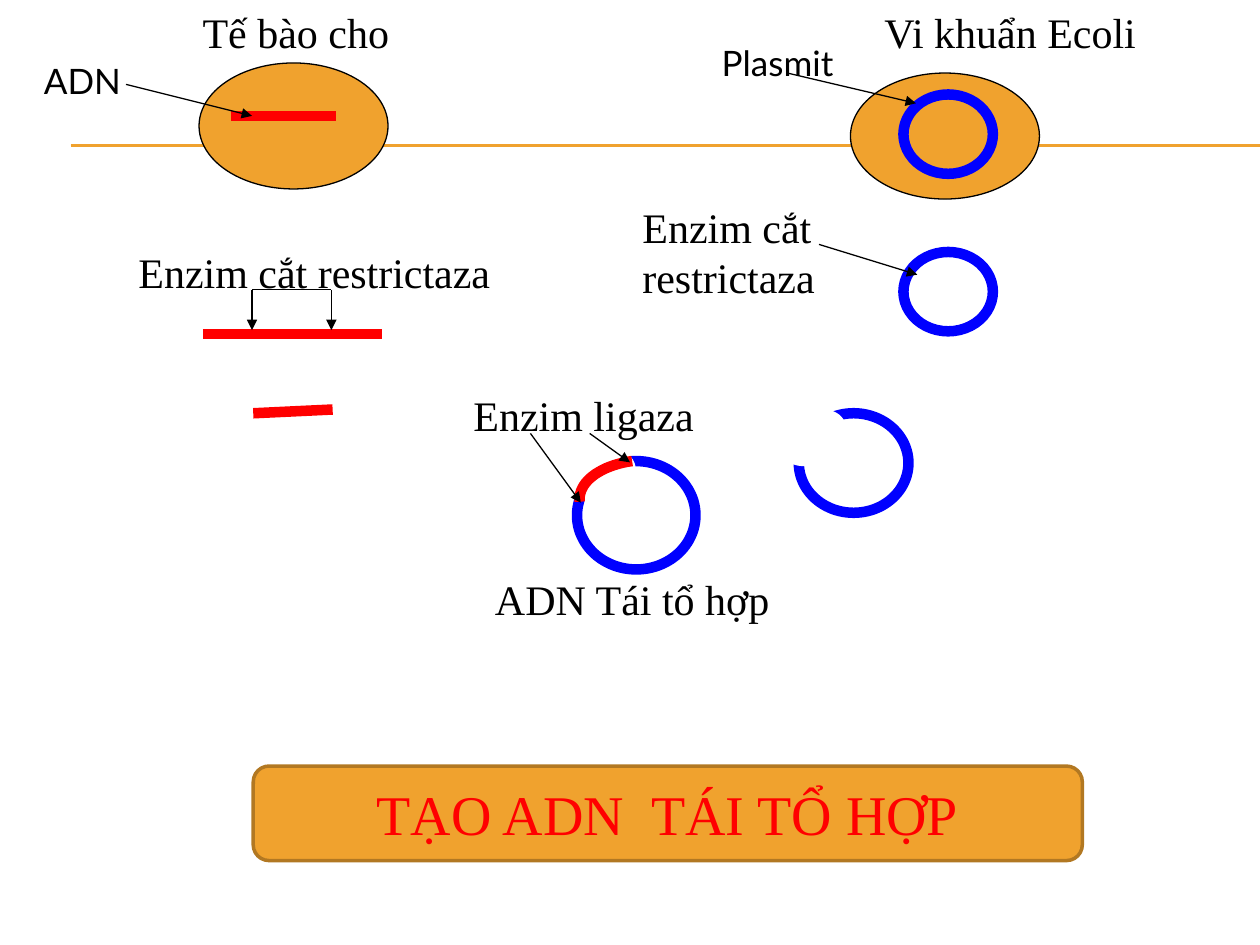
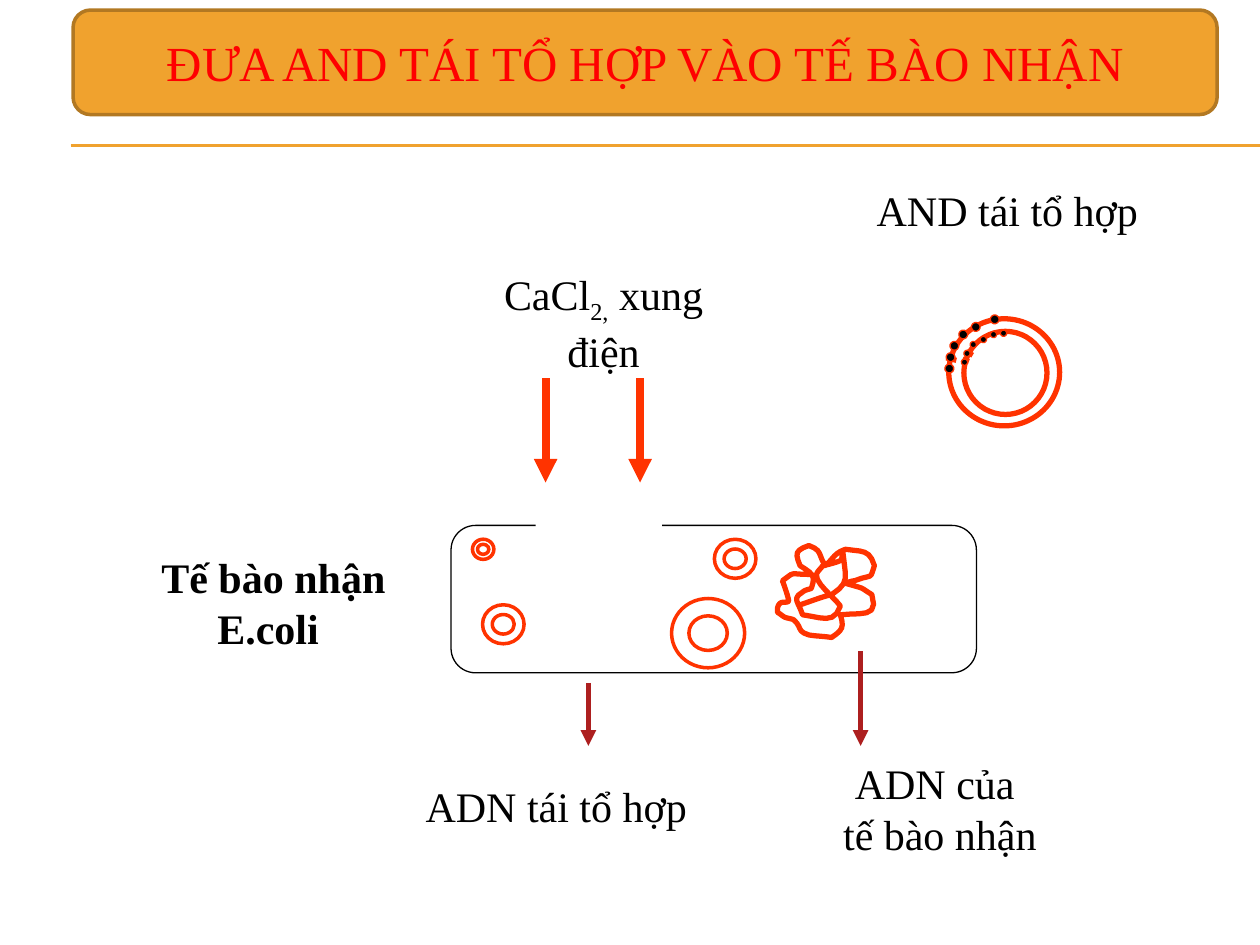
from dataclasses import dataclass
from itertools import pairwise
from math import cos, radians, sin

from lxml.etree import SubElement
from pptx import Presentation
from pptx.dml.color import RGBColor
from pptx.enum.shapes import MSO_CONNECTOR, MSO_SHAPE
from pptx.enum.text import MSO_ANCHOR, MSO_AUTO_SIZE, PP_ALIGN
from pptx.oxml.ns import qn
from pptx.util import Inches, Pt

AMBER, BROWN = "F0A22E", "B27822"
BLACK, WHITE = "000000", "FFFFFF"
RED, BLUE, ORANGE, CRIMSON = "FF0000", "0000FF", "FF3300", "AD1F1F"
SERIF, SANS = "Times New Roman", "Lato"
OVAL, RECT, ROUND, DONUT = (MSO_SHAPE.OVAL, MSO_SHAPE.RECTANGLE,
                            MSO_SHAPE.ROUNDED_RECTANGLE, MSO_SHAPE.DONUT)
Point = tuple[float, float]
Box = tuple[float, float, float, float]


@dataclass
class Line:
    start: Point
    end: Point
    color: str = BLACK
    width: float = 0.75
    arrow: bool = False


@dataclass
class Figure:
    kind: int
    box: Box
    fill: str | None = None
    line: str | None = None
    width: float = 0.75
    rotation: float = 0


@dataclass
class Label:
    box: Box
    text: str
    size: int = 24
    font: str = SERIF
    bold: bool = False
    centered: bool = False


def rgb(color: str) -> RGBColor:
    return RGBColor.from_string(color)


def paint(sp, fill: str | None, line: str | None, width: float) -> None:
    sp.shadow.inherit = False
    if fill:
        sp.fill.solid()
        sp.fill.fore_color.rgb = rgb(fill)
    else:
        sp.fill.background()
    if line:
        sp.line.color.rgb = rgb(line)
        sp.line.width = Pt(width)
    else:
        sp.line.fill.background()


def style_run(r, size: int, font: str, color: str = BLACK, bold: bool = False) -> None:
    r.font.size, r.font.name, r.font.bold = Pt(size), font, bold
    r.font.color.rgb = rgb(color)


def style_text(tf, size: int, font: str = SERIF, color: str = BLACK,
               bold: bool = False, centered: bool = True) -> None:
    for p in tf.paragraphs:
        p.alignment = PP_ALIGN.CENTER if centered else PP_ALIGN.LEFT
        for r in p.runs:
            style_run(r, size, font, color, bold)


def draw_line(s, item: Line) -> None:
    ends = [Inches(v) for v in (*item.start, *item.end)]
    cx = s.shapes.add_connector(MSO_CONNECTOR.STRAIGHT, *ends)
    cx.line.color.rgb = rgb(item.color)
    cx.line.width = Pt(item.width)
    if item.arrow:
        SubElement(cx.line._get_or_add_ln(), qn("a:tailEnd"), type="triangle")
    SubElement(cx.element.spPr, qn("a:effectLst"))


def draw_figure(s, item: Figure):
    sp = s.shapes.add_shape(item.kind, *map(Inches, item.box))
    paint(sp, item.fill, item.line, item.width)
    sp.rotation = item.rotation
    return sp


def draw_label(s, item: Label):
    tf = s.shapes.add_textbox(*map(Inches, item.box)).text_frame
    tf.word_wrap = True
    tf.text = item.text
    style_text(tf, item.size, item.font, bold=item.bold, centered=item.centered)
    return tf


def draw_plate(s, box: Box, text: str) -> None:
    tf = draw_figure(s, Figure(RECT, box, WHITE)).text_frame
    tf.text = text
    tf.word_wrap = False
    tf.vertical_anchor = MSO_ANCHOR.MIDDLE
    style_text(tf, 24)


def draw_curve(s, points: list[Point], color: str, width: float) -> None:
    emu = [(Inches(x), Inches(y)) for x, y in points]
    builder = s.shapes.build_freeform(*emu[0])
    builder.add_line_segments(emu[1:], close=False)
    paint(builder.convert_to_shape(), None, color, width)


def arc_points(center: Point, rx: float, ry: float, first: int, last: int) -> list[Point]:
    return [(center[0] + rx * cos(radians(a)), center[1] - ry * sin(radians(a)))
            for a in range(first, last + 1, 4)]


def bezier_points(knots: list[Point], steps: int = 6) -> list[Point]:
    points = [knots[0]]
    for i in range(0, len(knots) - 1, 3):
        for n in range(1, steps + 1):
            t = n / steps
            weights = ((1 - t) ** 3, 3 * t * (1 - t) ** 2, 3 * t * t * (1 - t), t ** 3)
            points.append(tuple(sum(w * k[axis] for w, k in zip(weights, knots[i:i + 4]))
                                for axis in (0, 1)))
    return points


def draw_banner(s, box: Box, text: str, size: int) -> None:
    banner = draw_figure(s, Figure(ROUND, box, AMBER, BROWN, 2))
    title = s.shapes.title
    title.left, title.top, title.width, title.height = map(Inches, box)
    tf = title.text_frame
    tf.text = text
    tf.word_wrap = True
    tf.auto_size = MSO_AUTO_SIZE.NONE
    tf.vertical_anchor = MSO_ANCHOR.MIDDLE
    style_text(tf, size, color=RED)
    banner.element.addnext(title.element)


def new_slide(prs):
    s = prs.slides.add_slide(prs.slide_layouts[5])
    for y in (1.15, 1.16):
        draw_line(s, Line((0.56, y), (10, y), AMBER))
    return s


def build_recombination(prs) -> None:
    s = new_slide(prs)
    for x, y in ((1.58, 0.5), (6.75, 0.58)):
        draw_figure(s, Figure(OVAL, (x, y, 1.5, 1), AMBER, BLACK))
    for y in (0.75, 2):
        draw_figure(s, Figure(OVAL, (7.17, y, 0.71, 0.63), None, BLUE, 6))

    draw_figure(s, Figure(OVAL, (6.34, 3.28, 0.87, 0.79), None, BLUE, 6))
    draw_figure(s, Figure(OVAL, (6.18, 3.28, 0.55, 0.39), WHITE, WHITE, rotation=328.5))
    draw_figure(s, Figure(OVAL, (4.58, 3.66, 0.94, 0.86), WHITE, BLUE, 6))
    draw_figure(s, Figure(OVAL, (4.5, 3.58, 0.55, 0.39), WHITE, WHITE, rotation=338.6))
    draw_curve(s, arc_points((5.15, 3.96), 0.55, 0.31, 104, 184), RED, 6)

    cuts = (1.61, 2.01, 2.64, 3.03)
    strands = [((1.83, 0.92), (2.67, 0.92)), ((2.01, 3.28), (2.64, 3.25))]
    strands += [((a, 2.65), (b, 2.65)) for a, b in pairwise(cuts)]
    for start, end in strands:
        draw_line(s, Line(start, end, RED, 6))

    draw_line(s, Line((2, 2.3), (2.63, 2.3)))
    for start, end in (
        ((1, 0.67), (2, 0.92)),
        ((6.25, 0.58), (7.27, 0.82)),
        ((2, 2.3), (2, 2.62)),
        ((2.63, 2.3), (2.63, 2.62)),
        ((6.5, 1.94), (7.28, 2.18)),
        ((4.68, 3.44), (5, 3.67)),
        ((4.21, 3.44), (4.61, 3.99)),
    ):
        draw_line(s, Line(start, end, arrow=True))

    for label in (
        Label((1.51, 0, 1.73, 0.5), "Tế bào cho"),
        Label((6.92, 0, 2.67, 0.5), "Vi khuẩn Ecoli"),
        Label((0.25, 0.42, 0.87, 0.43), "ADN", 20, SANS),
        Label((5.63, 0.28, 1.54, 0.43), "Plasmit", 20, SANS),
        Label((1, 1.91, 3.21, 0.5), "Enzim cắt restrictaza"),
        Label((5, 1.55, 2.21, 1.51), "Enzim cắt restrictaza"),
        Label((3.66, 3.04, 2.17, 0.51), "Enzim ligaza"),
        Label((3.83, 4.5, 3, 0.51), "ADN Tái tổ hợp"),
    ):
        draw_label(s, label)
    draw_banner(s, (2.01, 6.08, 6.58, 0.75), "TẠO ADN  TÁI TỔ HỢP", 32)


def draw_recombinant_ring(s) -> None:
    for box in ((7.53, 2.53, 0.88, 0.85), (7.65, 2.63, 0.66, 0.66)):
        draw_figure(s, Figure(OVAL, box, None, ORANGE, 3))
    for start, end in (
        ((7.69, 2.87), (7.64, 2.85)),
        ((7.72, 2.82), (7.67, 2.79)),
        ((7.57, 2.93), (7.5, 2.92)),
        ((7.59, 2.86), (7.51, 2.84)),
    ):
        draw_line(s, Line(start, end, ORANGE, 3))
    inner = ((7.63, 2.85), (7.65, 2.78), (7.7, 2.71), (7.78, 2.67), (7.86, 2.63), (7.94, 2.62))
    outer = ((7.5, 2.89), (7.51, 2.8), (7.54, 2.71), (7.61, 2.62), (7.71, 2.56), (7.86, 2.5))
    for dots, size, rotation in ((inner, 0.05, 341.5), (outer, 0.07, 345.6)):
        for x, y in dots:
            draw_figure(s, Figure(OVAL, (x, y, size, size), BLACK, ORANGE, rotation=rotation))


def draw_recipient_cell(s) -> None:
    draw_figure(s, Figure(ROUND, (3.58, 4.17, 4.17, 1.17), None, BLACK))
    chromosome = [
        (6.32, 4.81), (6.42, 4.78), (6.51, 4.74), (6.6, 4.72),
        (6.75, 4.62), (6.71, 4.59), (6.69, 4.38), (6.68, 4.4), (6.69, 4.43), (6.67, 4.45),
        (6.63, 4.47), (6.53, 4.49), (6.53, 4.49), (6.51, 4.52), (6.49, 4.53), (6.48, 4.56),
        (6.47, 4.63), (6.62, 4.74), (6.67, 4.81), (6.62, 4.96), (6.52, 4.9), (6.37, 4.88),
        (6.34, 4.78), (6.28, 4.75), (6.37, 4.7), (6.39, 4.68), (6.42, 4.68), (6.44, 4.67),
        (6.48, 4.56), (6.44, 4.55), (6.35, 4.49), (6.31, 4.39), (6.31, 4.37), (6.42, 4.33),
        (6.53, 4.37), (6.49, 4.4), (6.55, 4.49), (6.62, 4.43), (6.62, 4.39), (6.71, 4.36),
        (6.85, 4.38), (6.9, 4.36), (6.94, 4.49), (6.9, 4.61), (6.94, 4.55), (6.78, 4.61),
        (6.76, 4.61), (6.71, 4.63), (6.71, 4.63), (6.88, 4.68), (6.81, 4.65), (6.92, 4.72),
        (6.98, 4.91), (6.83, 4.86), (6.67, 4.88), (6.7, 4.98), (6.69, 5), (6.6, 5.06),
        (6.54, 5.05), (6.48, 5.05), (6.42, 5.04), (6.32, 5.01), (6.37, 4.98), (6.3, 4.92),
        (6.28, 4.91), (6.26, 4.91), (6.23, 4.9), (6.21, 4.89), (6.19, 4.87), (6.17, 4.86),
        (6.17, 4.83), (6.17, 4.81), (6.19, 4.79), (6.21, 4.77), (6.25, 4.79), (6.26, 4.77),
        (6.26, 4.75), (6.22, 4.63), (6.21, 4.61), (6.32, 4.53), (6.25, 4.56), (6.44, 4.56),
    ]
    draw_curve(s, bezier_points(chromosome), ORANGE, 3)
    for box in (
        (5.67, 4.28, 0.33, 0.31),
        (3.75, 4.28, 0.17, 0.16),
        (3.83, 4.8, 0.33, 0.31),
        (5.33, 4.75, 0.58, 0.55),
    ):
        draw_figure(s, Figure(DONUT, box, WHITE, ORANGE, 2))
    draw_figure(s, Figure(RECT, (4.25, 3.92, 1, 0.4), WHITE, rotation=357))


def build_transfer(prs) -> None:
    s = new_slide(prs)
    for box, text in (
        ((6.42, 6, 2.08, 0.83), "ADN của \ntế bào nhận"),
        ((6.83, 1.25, 2.33, 0.83), "AND tái tổ hợp"),
        ((3.25, 5.98, 2.33, 0.83), "ADN tái tổ hợp"),
    ):
        draw_plate(s, box, text)
    draw_recombinant_ring(s)
    tf = draw_label(s, Label((3.83, 2.08, 1.92, 0.91), "CaCl", centered=True))
    for text, baseline in (("2,", "-25000"), (" xung điện", "0")):
        r = tf.paragraphs[0].add_run()
        r.text = text
        style_run(r, 24, SERIF)
        r.font._element.set("baseline", baseline)
    draw_label(s, Label((1.17, 4.33, 2, 0.9), "Tế bào nhận E.coli ", bold=True, centered=True))
    draw_recipient_cell(s)
    for x, top, bottom, color, width in (
        (4.33, 3, 3.83, ORANGE, 4.5),
        (5.08, 3, 3.83, ORANGE, 4.5),
        (4.67, 5.42, 5.92, CRIMSON, 3),
        (6.83, 5.17, 5.92, CRIMSON, 3),
    ):
        draw_line(s, Line((x, top), (x, bottom), color, width, True))
    draw_banner(s, (0.58, 0.08, 9.08, 0.83), "ĐƯA AND TÁI TỔ HỢP VÀO TẾ BÀO NHẬN", 28)


def main() -> None:
    prs = Presentation()
    prs.slide_width, prs.slide_height = Inches(10), Inches(7.5)
    build_recombination(prs)
    build_transfer(prs)
    prs.save("out.pptx")


if __name__ == "__main__":
    main()
